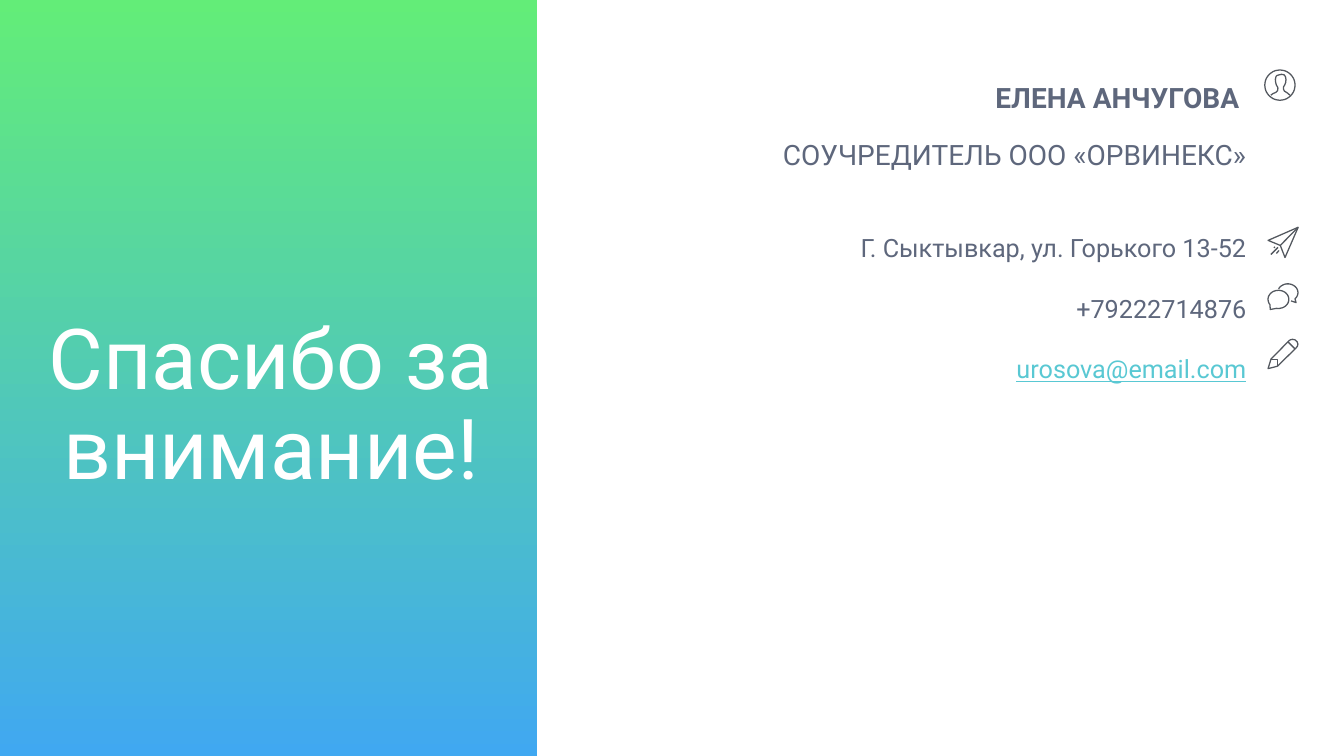
from math import cos, radians, sin

from pptx import Presentation
from pptx.dml.color import RGBColor
from pptx.enum.shapes import MSO_SHAPE
from pptx.enum.text import MSO_ANCHOR, PP_ALIGN
from pptx.util import Inches, Pt

WHITE = RGBColor(0xFF, 0xFF, 0xFF)
GREEN = RGBColor(0x63, 0xED, 0x78)
BLUE = RGBColor(0x40, 0xA8, 0xF1)
SLATE = RGBColor(0x5E, 0x67, 0x7C)
AQUA = RGBColor(0x59, 0xC8, 0xD3)
GRAY = RGBColor(0x53, 0x58, 0x5F)


def arc(center_x, center_y, radius_x, radius_y, start, end):
    steps = 40
    angles = [radians(start + (end - start) * i / steps) for i in range(steps + 1)]
    return [(center_x + radius_x * cos(a), center_y + radius_y * sin(a)) for a in angles]


TEXTS = [
    {
        "at": (0.21, 1.87, 4.96, 3.12), "anchor": MSO_ANCHOR.BOTTOM,
        "align": PP_ALIGN.CENTER, "spacing": 0.9, "size": 60, "color": WHITE,
        "lines": [("Спасибо за внимание!", {})],
    },
    {
        "at": (7.3, 0.52, 5.16, 1.1), "anchor": MSO_ANCHOR.TOP,
        "align": PP_ALIGN.RIGHT, "spacing": 1.7, "size": 20, "color": SLATE,
        "lines": [("ЕЛЕНА АНЧУГОВА ", {"bold": True}), ("СОУЧРЕДИТЕЛЬ ООО «ОРВИНЕКС»", {})],
    },
    {
        "at": (8.08, 1.96, 4.38, 1.82), "anchor": MSO_ANCHOR.TOP,
        "align": PP_ALIGN.RIGHT, "spacing": 2.0, "size": 18, "color": SLATE,
        "lines": [
            ("Г. Сыктывкар, ул. Горького 13-52", {}),
            ("+79222714876", {}),
            ("urosova@email.com", {"underline": True, "color": AQUA}),
        ],
    },
]

PERSON = [
    arc(15.5, 15.5, 15, 15, 0, 360),
    [(6.5, 25.5), (8.5, 24), (11.5, 22.7), (13.2, 21), (13.5, 18.5), (13, 17), (12, 15.5),
     (11.3, 13), (11, 10), (11.5, 7.3), (12.5, 6), (14.5, 5.4), (17, 4.8), (19.5, 5.2),
     (21, 7), (21.5, 10), (21.2, 13), (20.2, 15.5), (19.2, 17), (19, 19.5), (20, 21.5),
     (22.5, 23), (25.5, 25.5)],
]
PLANE = [
    [(0.7, 13.5), (30.5, 0.5), (17.5, 30.5), (12.8, 18.5), (0.7, 13.5)],
    [(12.8, 18.5), (30.5, 0.5)],
    [(9, 26.5), (11.5, 23.5)],
    [(3.5, 27.5), (10.5, 20.5)],
    [(6.5, 21), (7.5, 20)],
]
CHAT = [
    arc(11, 16, 10.3, 9, 100, -215) + [(2.9, 26), (9.2, 24.9)],
    arc(20.3, 9.3, 10, 8.7, 205, 405) + [(28.5, 19.2), (23.5, 17.5)],
]
PENCIL = [
    [(0.7, 29.7), (3.6, 20.3), (21.5, 2), (23, 1), (25, 0.6), (27.5, 1.2), (29.5, 3),
     (30.3, 5.5), (29.8, 7.5), (28.5, 9.2), (10, 27.3), (0.7, 29.7)],
    [(20.5, 3.2), (27.5, 10.2)],
    [(3.6, 20.5), (10, 20.5), (10, 27.3)],
]
ICONS = [(12.54, 0.69, PERSON), (12.57, 2.25, PLANE), (12.57, 2.81, CHAT), (12.57, 3.36, PENCIL)]


def add_panel(page):
    panel = page.shapes.add_shape(MSO_SHAPE.RECTANGLE, 0, 0, Inches(5.33), Inches(7.5))
    panel.shadow.inherit = False
    panel.line.fill.background()
    panel.fill.gradient()
    panel.fill.gradient_angle = 270
    for stop, color, position in zip(panel.fill.gradient_stops, (GREEN, BLUE), (0, 1)):
        stop.color.rgb = color
        stop.position = position


def add_text(page, block):
    box = page.shapes.add_textbox(*map(Inches, block["at"]))
    frame = box.text_frame
    frame.word_wrap = True
    frame.vertical_anchor = block["anchor"]
    for index, (text, extra) in enumerate(block["lines"]):
        para = frame.add_paragraph() if index else frame.paragraphs[0]
        para.alignment = block["align"]
        para.line_spacing = block["spacing"]
        span = para.add_run()
        span.text = text
        formats = {"name": "Roboto", "size": Pt(block["size"]), "color": block["color"], **extra}
        span.font.color.rgb = formats.pop("color")
        for name, value in formats.items():
            setattr(span.font, name, value)


def add_icon(page, left, top, strokes):
    units = [[(x * 10, y * 10) for x, y in stroke] for stroke in strokes]
    builder = page.shapes.build_freeform(*units[0][0], scale=Inches(1) / 1000)
    for index, stroke in enumerate(units):
        if index:
            builder.move_to(*stroke[0])
        builder.add_line_segments(stroke[1:], close=False)
    icon = builder.convert_to_shape(Inches(left), Inches(top))
    icon.shadow.inherit = False
    icon.fill.background()
    icon.line.color.rgb = GRAY
    icon.line.width = Pt(0.9)


def main():
    deck = Presentation()
    deck.slide_width, deck.slide_height = Inches(13.33), Inches(7.5)
    page = deck.slides.add_slide(deck.slide_layouts[6])
    add_panel(page)
    for block in TEXTS:
        add_text(page, block)
    for left, top, strokes in ICONS:
        add_icon(page, left, top, strokes)
    deck.save("out.pptx")


if __name__ == "__main__":
    main()
